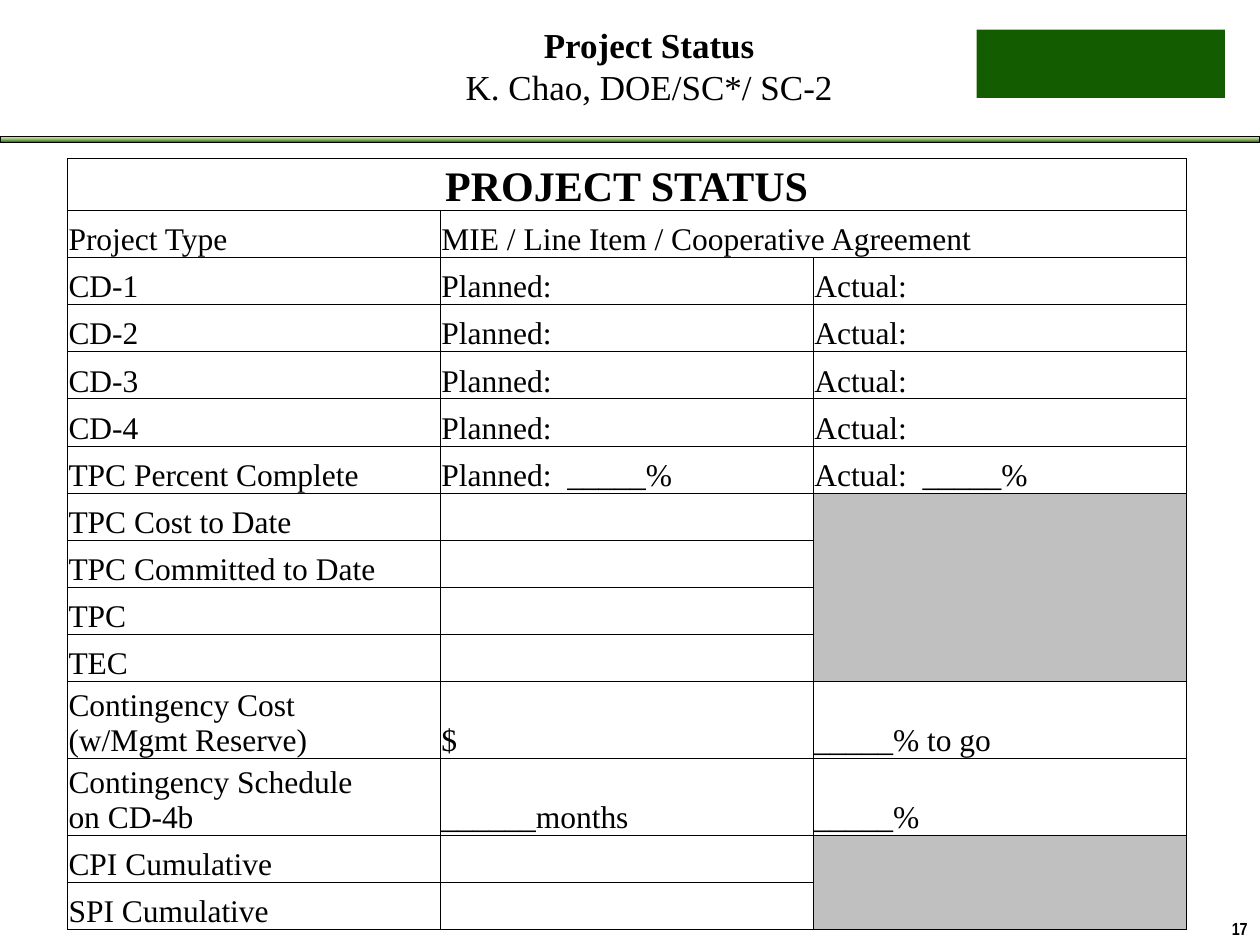
from copy import deepcopy

from lxml import etree
from pptx import Presentation
from pptx.dml.color import RGBColor
from pptx.enum import shapes, text
from pptx.oxml import ns
from pptx.util import Pt

COLORS = {"black": "000000", "green": "135C00", "gray": "C0C0C0",
          "rule_light": "DDEBCF", "rule_middle": "9CB86E", "rule_dark": "156B13"}
SERIF = "Times New Roman"
LEFT, CENTER, RIGHT = text.PP_ALIGN.LEFT, text.PP_ALIGN.CENTER, text.PP_ALIGN.RIGHT

STAGES = ["CD-1", "CD-2", "CD-3", "CD-4"]
ROWS = [
    ["PROJECT STATUS"],
    ["Project Type", "MIE / Line Item / Cooperative Agreement"],
    *[[stage, "Planned:", "Actual:"] for stage in STAGES],
    ["TPC Percent Complete", "Planned:  _____%", "Actual:  _____%"],
    ["TPC Cost to Date"],
    ["TPC Committed to Date"],
    ["TPC"],
    ["TEC"],
    ["Contingency Cost\v(w/Mgmt Reserve)", "$", "_____% to go"],
    ["Contingency Schedule\non CD-4b", "______months", "_____%"],
    ["CPI Cumulative"],
    ["SPI Cumulative"],
]
# The second contingency row grows to fit its two lines
ROW_HEIGHT = 26.95
SPECIAL_HEIGHTS = {0: 29.7, 11: 41.8}
# First row, first column, last row, last column
MERGES = [(0, 0, 0, 2), (1, 1, 1, 2), (7, 2, 10, 2), (13, 2, 14, 2)]
GRAY_CELLS = [(7, 2), (13, 2)]


def color(name):
    return RGBColor.from_string(COLORS[name])


def format_paragraph(paragraph, size, name=SERIF, bold=False, align=LEFT):
    paragraph.alignment = align
    for font in [paragraph.font, *[run.font for run in paragraph.runs]]:
        font.size, font.name, font.bold = Pt(size), name, bold
        font.color.rgb = color("black")


def add_lines(slide, box, lines, align):
    """Text box with one paragraph per (wording, format) pair."""
    shape = slide.shapes.add_textbox(*map(Pt, box))
    frame = shape.text_frame
    frame.word_wrap = True
    frame.text = "\n".join(wording for wording, _ in lines)
    for paragraph, (_, style) in zip(frame.paragraphs, lines):
        format_paragraph(paragraph, align=align, **style)


def add_rectangle(slide, box):
    rectangle = slide.shapes.add_shape(shapes.MSO_SHAPE.RECTANGLE, *map(Pt, box))
    rectangle.shadow.inherit = False
    return rectangle


def add_header_rule(slide, box):
    rule = add_rectangle(slide, box)
    rule.line.color.rgb = color("black")
    rule.line.width = Pt(0.5)
    rule.fill.gradient()
    rule.fill.gradient_angle = 270
    # The default gradient has two stops; a third one goes between them
    stop_list = rule._element.spPr.find(".//" + ns.qn("a:gsLst"))
    stop_list.insert(1, deepcopy(stop_list[0]))
    names = ["rule_light", "rule_middle", "rule_dark"]
    for index, (stop, name) in enumerate(zip(rule.fill.gradient_stops, names)):
        stop.position = index / 2
        stop.color.rgb = color(name)


def add_header(slide, box):
    left, top, width, height = box
    add_header_rule(slide, (left, top + height - 3.6, width, 3.6))
    # Plain block at the right
    block = add_rectangle(slide, (left + 558, top + 17, 142, 39))
    block.fill.solid()
    block.fill.fore_color.rgb = color("green")
    block.line.fill.background()
    # Title and presenter
    add_lines(slide, (left + 203.2, top + 10, 335.6, 60), [
        ("Project Status", dict(size=20, bold=True)),
        ("K. Chao, DOE/SC*/ SC-2", dict(size=20)),
    ], CENTER)


def add_borders(cell):
    properties = cell._tc.get_or_add_tcPr()
    for side in ("a:lnL", "a:lnR", "a:lnT", "a:lnB"):
        line = etree.SubElement(properties, ns.qn(side), w=str(Pt(0.5)))
        fill = etree.SubElement(line, ns.qn("a:solidFill"))
        etree.SubElement(fill, ns.qn("a:srgbClr"), val=COLORS["black"])


def add_status_table(slide, box):
    left, top, width = box
    heights = [SPECIAL_HEIGHTS.get(row, ROW_HEIGHT) for row in range(len(ROWS))]
    frame = slide.shapes.add_table(len(ROWS), 3, Pt(left), Pt(top), Pt(width), Pt(sum(heights)))
    table = frame.table
    table.first_row = table.horz_banding = False
    for column in table.columns:
        column.width = Pt(width / 3)
    for row, height in enumerate(heights):
        table.rows[row].height = Pt(height)
        for column in range(3):
            cell = table.cell(row, column)
            cell.margin_left = cell.margin_right = cell.margin_top = Pt(0.75)
            cell.margin_bottom = 0
            cell.vertical_anchor = text.MSO_ANCHOR.BOTTOM
            add_borders(cell)
            cell.fill.background()
            if column < len(ROWS[row]):
                cell.text_frame.text = ROWS[row][column]
            is_heading = row == 0
            for paragraph in cell.text_frame.paragraphs:
                format_paragraph(paragraph, 24 if is_heading else 18, bold=is_heading,
                                 align=CENTER if is_heading else LEFT)
    for first_row, first_column, last_row, last_column in MERGES:
        table.cell(first_row, first_column).merge(table.cell(last_row, last_column))
    for position in GRAY_CELLS:
        cell = table.cell(*position)
        cell.fill.solid()
        cell.fill.fore_color.rgb = color("gray")


def add_page_number(slide, box):
    add_lines(slide, box, [("17", dict(size=10, name="Arial Narrow", bold=True))], RIGHT)


def main():
    presentation = Presentation()
    presentation.slide_width, presentation.slide_height = Pt(720), Pt(540)
    slide = presentation.slides.add_slide(presentation.slide_layouts[6])
    add_header(slide, (0, 0, 720, 81.4))
    add_page_number(slide, (690.5, 521.3, 29.5, 18.7))
    add_status_table(slide, (38.4, 90.5, 639.4))
    presentation.save("out.pptx")


if __name__ == "__main__":
    main()
